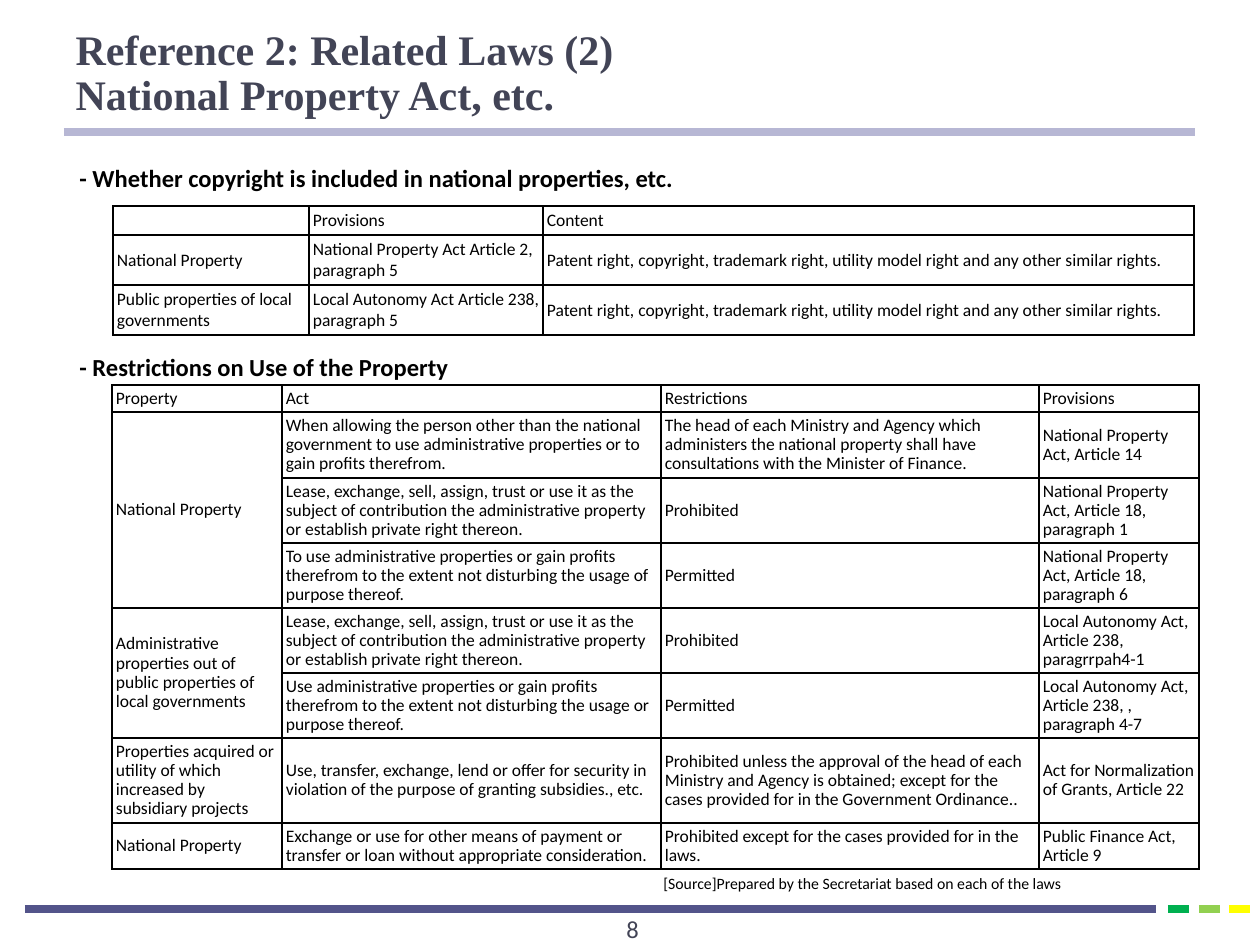
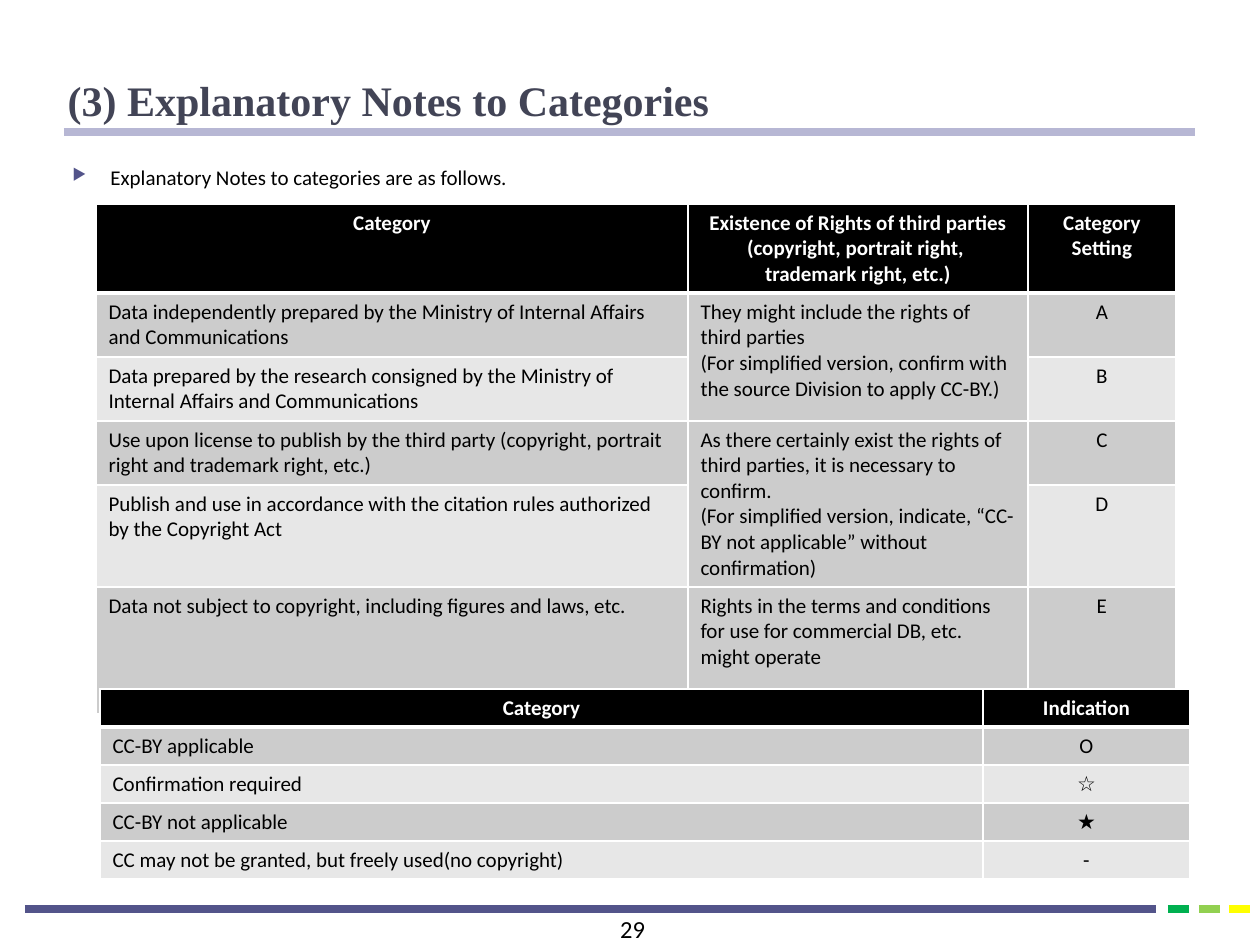
from lxml import etree
from pptx import Presentation
from pptx import util as u
from pptx.dml.color import RGBColor
from pptx.enum import shapes, text
from pptx.oxml.ns import qn

PX = 7257  # EMU in one px, 126 px to the inch
BLACK, WHITE, SLATE, INDIGO, LILAC = "000000", "FFFFFF", "424456", "53548A", "B7B7D4"
DARK_BAND, LIGHT_BAND = "CCCCCC", "E7E7E7"
LEFT, CENTER = text.PP_ALIGN.LEFT, text.PP_ALIGN.CENTER
TOP, MIDDLE, BOTTOM = (text.MSO_ANCHOR.TOP, text.MSO_ANCHOR.MIDDLE,
                       text.MSO_ANCHOR.BOTTOM)


def style_text(tf, size, colour=BLACK, bold=False, align=LEFT, spacing=1.0,
               font="Calibri"):
    for p in tf.paragraphs:
        p.alignment = align
        p.line_spacing = spacing
        for r in p.runs:
            r.font.name = font
            r.font.size = u.Pt(size)
            r.font.bold = bold
            r.font.color.rgb = RGBColor.from_string(colour)
        if not p.runs:  # keeps an empty cell from stretching its row
            etree.SubElement(p._p, qn("a:endParaRPr"), sz=str(size * 100))


def add_grid(slide, left, top, widths, heights, rows, spans=(), size=10,
             spacing=1.0, banded=False):
    """Add a table; banded gives a black header, grey bands and white rules."""
    table = slide.shapes.add_table(
        len(rows), len(widths), left * PX, top * PX,
        sum(widths) * PX, sum(heights) * PX).table
    table.first_row = table.horz_banding = False
    for column, width in zip(table.columns, widths):
        column.width = width * PX
    for i, (row, height) in enumerate(zip(rows, heights)):
        table.rows[i].height = height * PX
        for j, words in enumerate(row):
            cell = table.cell(i, j)
            cell.text_frame.text = words
            header = banded and i == 0
            centred = header or (banded and j == len(row) - 1)
            style_text(cell.text_frame, size, WHITE if header else BLACK,
                       header, CENTER if centred else LEFT, spacing)
            tc_pr = cell._tc.get_or_add_tcPr()
            for side in "LRTB":
                heavy = banded and (side, i) in (("B", 0), ("T", 1))
                ln = etree.SubElement(tc_pr, qn("a:ln" + side),
                                      w=str(u.Pt(3 if heavy else 1)))
                fill = etree.SubElement(ln, qn("a:solidFill"))
                etree.SubElement(fill, qn("a:srgbClr"),
                                 val=WHITE if banded else BLACK)
            if banded:
                band = DARK_BAND if i % 2 else LIGHT_BAND
                cell.fill.solid()
                cell.fill.fore_color.rgb = RGBColor.from_string(
                    BLACK if header else band)
                cell.vertical_anchor = TOP
            else:
                cell.fill.background()
                cell.vertical_anchor = MIDDLE
                cell.margin_left = cell.margin_right = 4 * PX
                cell.margin_top = cell.margin_bottom = 4 * PX
    for first, last, j in spans:
        table.cell(first, j).merge(table.cell(last, j))


prs = Presentation()
prs.slide_width, prs.slide_height = 1260 * PX, 945 * PX

# Titles, rules and page numbers on every slide
RULES = [  # left, right, y, colour, points
    (25, 1156, 909, INDIGO, 4.5),
    (1168, 1189, 909, "00B050", 4.5),
    (1199, 1220, 909, "92D050", 4.5),
    (1229, 1250, 909, "FFFF00", 4.5),
    (64, 1195, 132, LILAC, 4.25),
]
PAGES = [  # title, left, top, height, page number, number colour
    ("Reference 2: Related Laws (2) \vNational Property Act, etc.",
     63, 1, 125, "8", SLATE),
    ("(3) Explanatory Notes to Categories", 55, 23, 109, "29", BLACK),
]
for title, left, top, height, number, colour in PAGES:
    slide = prs.slides.add_slide(prs.slide_layouts[5])
    for x1, x2, y, rule_colour, points in RULES:
        rule = slide.shapes.add_connector(
            shapes.MSO_CONNECTOR.STRAIGHT, x1 * PX, y * PX, x2 * PX, y * PX)
        rule.line.color.rgb = RGBColor.from_string(rule_colour)
        rule.line.width = u.Pt(points)
        etree.SubElement(rule._element.spPr, qn("a:effectLst"))
    sp = slide.shapes.title
    sp.left, sp.top, sp.width, sp.height = (
        left * PX, top * PX, 1134 * PX, height * PX)
    tf = sp.text_frame
    tf.text = title
    tf.auto_size = text.MSO_AUTO_SIZE.NONE
    tf.vertical_anchor = BOTTOM
    style_text(tf, 24, SLATE, True, spacing=0.9, font="Times New Roman")
    sp = slide.shapes.add_textbox(496 * PX, 908 * PX, 273 * PX, 50 * PX)
    sp.text_frame.word_wrap = True
    sp.text_frame.text = number
    style_text(sp.text_frame, 14, colour, align=CENTER)

laws, categories = prs.slides

# Related laws
add_grid(laws, 113, 206, [196, 234, 651], [29, 50, 50], [
    ("", "Provisions", "Content"),
    ("National Property", "National Property Act Article 2, paragraph 5",
     "Patent right, copyright, trademark right, utility model right and any "
     "other similar rights."),
    ("Public properties of local governments",
     "Local Autonomy Act Article 238, paragraph 5",
     "Patent right, copyright, trademark right, utility model right and any "
     "other similar rights."),
])

LEASE = ("Lease, exchange, sell, assign, trust or use it as the subject of "
         "contribution the administrative property or establish private right "
         "thereon.")
add_grid(laws, 112, 385, [170, 379, 378, 160],
         [27, 66, 65, 65, 65, 65, 85, 46], [
    ("Property", "Act", "Restrictions", "Provisions"),
    ("National Property",
     "When allowing the person other than the national government to use "
     "administrative properties or to gain profits therefrom.",
     "The head of each Ministry and Agency which administers the national "
     "property shall have consultations with the Minister of Finance.",
     "National Property Act, Article 14"),
    ("", LEASE, "Prohibited", "National Property Act, Article 18, paragraph 1"),
    ("",
     "To use administrative properties or gain profits therefrom to the extent "
     "not disturbing the usage of purpose thereof.",
     "Permitted", "National Property Act, Article 18, paragraph 6"),
    ("Administrative properties out of public properties of local governments",
     LEASE, "Prohibited", "Local Autonomy Act, Article 238, paragrrpah4-1"),
    ("",
     "Use administrative properties or gain profits therefrom to the extent "
     "not disturbing the usage or purpose thereof.",
     "Permitted", "Local Autonomy Act, Article 238, , paragraph 4-7"),
    ("Properties acquired or utility of which increased by subsidiary projects",
     "Use, transfer, exchange, lend or offer for security in violation of the "
     "purpose of granting subsidies., etc.",
     "Prohibited unless the approval of the head of each Ministry and Agency "
     "is obtained; except for the cases provided for in the Government "
     "Ordinance..",
     "Act for Normalization of Grants, Article 22"),
    ("National Property",
     "Exchange or use for other means of payment or transfer or loan without "
     "appropriate consideration.",
     "Prohibited except for the cases provided for in the laws.",
     "Public Finance Act, Article 9"),
], spans=[(1, 3, 0), (4, 5, 0)], spacing=0.9)

for left, top, width, height, words, size, bold, spacing in [
    (67, 160, 917, 39,
     "- Whether copyright is included in national properties, etc.",
     14, True, 0.9),
    (67, 349, 902, 39, "- Restrictions on Use of the Property", 14, True, 0.9),
    (651, 868, 547, 32,
     "[Source]Prepared by the Secretariat based on each of the laws",
     9, False, 1.0),
]:
    sp = laws.shapes.add_textbox(left * PX, top * PX, width * PX, height * PX)
    sp.text_frame.word_wrap = True
    sp.text_frame.text = words
    style_text(sp.text_frame, size, bold=bold, spacing=spacing)

# Notes to categories
sp = categories.shapes.add_textbox(60 * PX, 159 * PX, 1182 * PX, 40 * PX)
tf = sp.text_frame
tf.word_wrap = True
tf.text = "Explanatory Notes to categories are as follows."
style_text(tf, 12, spacing=u.Pt(14))
p_pr = tf.paragraphs[0]._p.get_or_add_pPr()
p_pr.set("marL", str(38 * PX))
p_pr.set("indent", str(-38 * PX))
bullet_colour = etree.SubElement(p_pr, qn("a:buClr"))
etree.SubElement(bullet_colour, qn("a:srgbClr"), val=INDIGO)
etree.SubElement(p_pr, qn("a:buSzPct"), val="76000")
etree.SubElement(p_pr, qn("a:buChar"), char="▶")

add_grid(categories, 96, 204, [592, 340, 148], [89, 64, 64, 64, 102, 127], [
    ("Category",
     "Existence of Rights of third parties (copyright, portrait right, \v"
     "trademark right, etc.)",
     "Category Setting"),
    ("Data independently prepared by the Ministry of Internal Affairs and "
     "Communications",
     "They might include the rights of third parties\n"
     "(For simplified version, confirm with the source Division to apply "
     "CC-BY.)", "A"),
    ("Data prepared by the research consigned by the Ministry of Internal "
     "Affairs and Communications", "", "B"),
    ("Use upon license to publish by the third party (copyright, portrait "
     "right and trademark right, etc.)",
     "As there certainly exist the rights of third parties, it is necessary to "
     "confirm.\n(For simplified version, indicate, “CC-BY not applicable” "
     "without confirmation)", "C"),
    ("Publish and use in accordance with the citation rules authorized by the "
     "Copyright Act", "", "D"),
    ("Data not subject to copyright, including figures and laws, etc.",
     "Rights in the terms and conditions for use for commercial DB, etc. might "
     "operate", "E"),
], spans=[(1, 2, 1), (3, 4, 1)], size=12, banded=True)

add_grid(categories, 100, 689, [883, 207], [38] * 5, [
    ("Category", "Indication"),
    ("CC-BY applicable", "O"),
    ("Confirmation required", "☆"),
    ("CC-BY not applicable", "★"),
    ("CC may not be granted, but freely used(no copyright)", "-"),
], size=12, banded=True)

prs.save("out.pptx")
